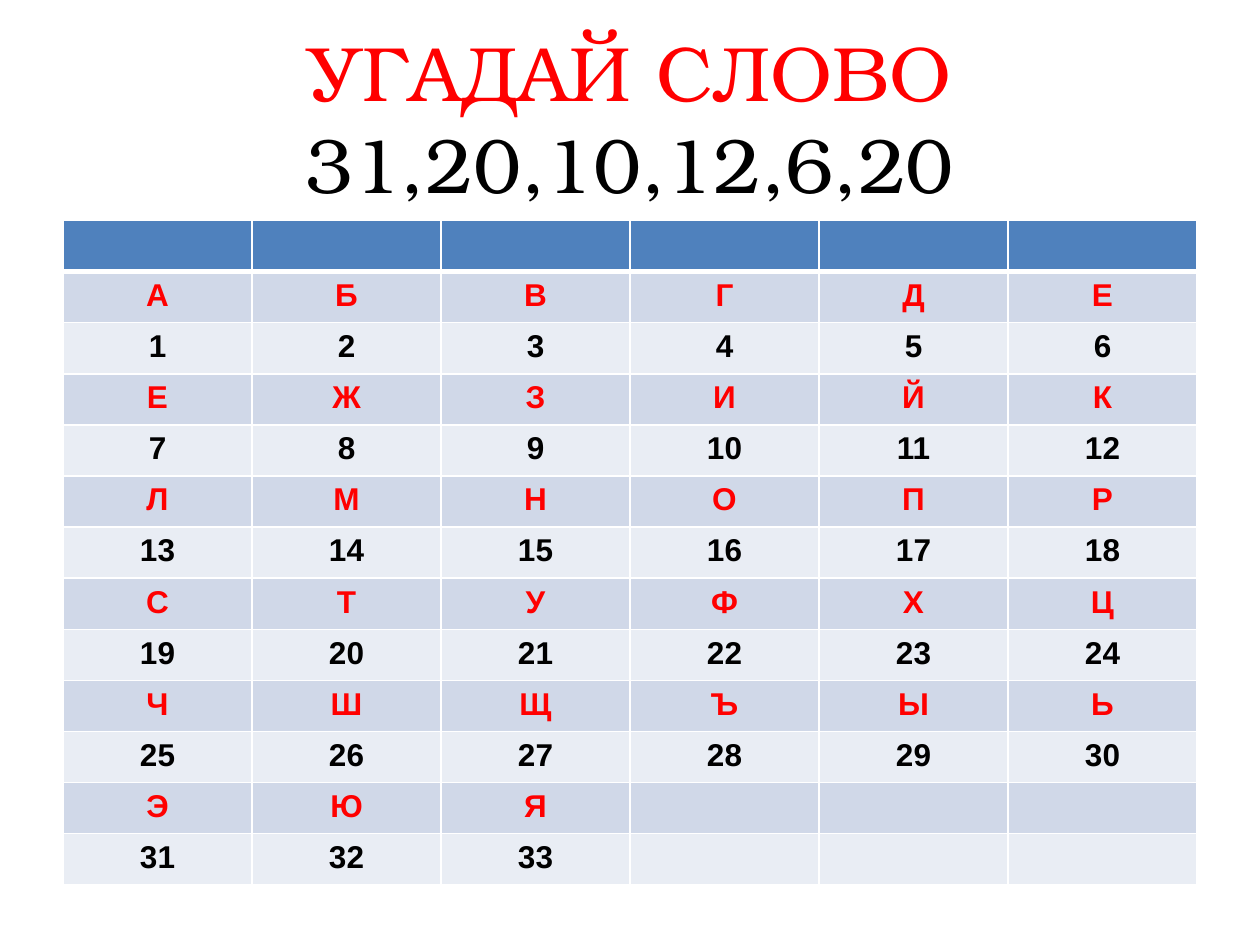
import pptx
import pptx.dml.color
import pptx.enum.text
import pptx.oxml
import pptx.oxml.ns
import pptx.util

Pt = pptx.util.Pt
HUES = {
    "red": "FF0000",
    "black": "000000",
    "white": "FFFFFF",
    "head": "4F81BD",
    "dark": "D0D8E8",
    "light": "E9EDF4",
}
ABC = "АБВГДЕЕЖЗИЙКЛМНОПРСТУФХЦЧШЩЪЫЬЭЮЯ"
COLS = 6
ROWS = 13
LEFT = 36
WIDTH = 648


def hue(name):
    return pptx.dml.color.RGBColor.from_string(HUES[name])


def write(para, text, size=18, font="Arial", color="black", bold=False):
    para.alignment = pptx.enum.text.PP_ALIGN.CENTER
    run = para.add_run()
    run.text = text
    run.font.size = Pt(size)
    run.font.name = font
    run.font.bold = bold
    run.font.color.rgb = hue(color)


def add_title(slide):
    box = slide.shapes.add_textbox(Pt(LEFT), Pt(21.6), Pt(WIDTH), Pt(90))
    frame = box.text_frame
    frame.word_wrap = True
    frame.vertical_anchor = pptx.enum.text.MSO_ANCHOR.MIDDLE
    para = frame.paragraphs[0]
    style = {"size": 44, "font": "TeX Gyre Bonum"}
    write(para, "УГАДАЙ СЛОВО", color="red", **style)
    para.add_line_break()
    write(para, "31,20,10,12,6,20", **style)


def edge(cell, sides):
    props = cell._tc.get_or_add_tcPr()
    for spot, side in enumerate("LRTB"):
        line = pptx.oxml.parse_xml(
            f'<a:ln{side} {pptx.oxml.ns.nsdecls("a")} w="{Pt(sides.get(side, 1))}">'
            f'<a:solidFill><a:srgbClr val="{HUES["white"]}"/></a:solidFill>'
            f'</a:ln{side}>'
        )
        props.insert(spot, line)


def paint(cell, color, sides):
    edge(cell, sides)
    cell.fill.solid()
    cell.fill.fore_color.rgb = hue(color)


def add_grid(slide):
    high = 29.2
    grid = slide.shapes.add_table(
        ROWS, COLS, Pt(LEFT), Pt(126), Pt(WIDTH), Pt(high * ROWS)
    ).table
    for col in grid.columns:
        col.width = Pt(WIDTH / COLS)
    for row in grid.rows:
        row.height = Pt(high)
    thick = {0: {"B": 3}, 1: {"T": 3}}
    for row in range(ROWS):
        odd = row % 2 == 1
        fill = "head" if row == 0 else "dark" if odd else "light"
        for col in range(COLS):
            cell = grid.cell(row, col)
            paint(cell, fill, thick.get(row, {}))
            spot = (row - 1) // 2 * COLS + col
            if row and spot < len(ABC):
                text = ABC[spot] if odd else str(spot + 1)
                color = "red" if odd else "black"
                write(cell.text_frame.paragraphs[0], text, color=color, bold=True)


def main():
    deck = pptx.Presentation()
    deck.slide_width = Pt(720)
    deck.slide_height = Pt(540)
    slide = deck.slides.add_slide(deck.slide_layouts[6])
    add_title(slide)
    add_grid(slide)
    deck.save("out.pptx")


if __name__ == "__main__":
    main()
